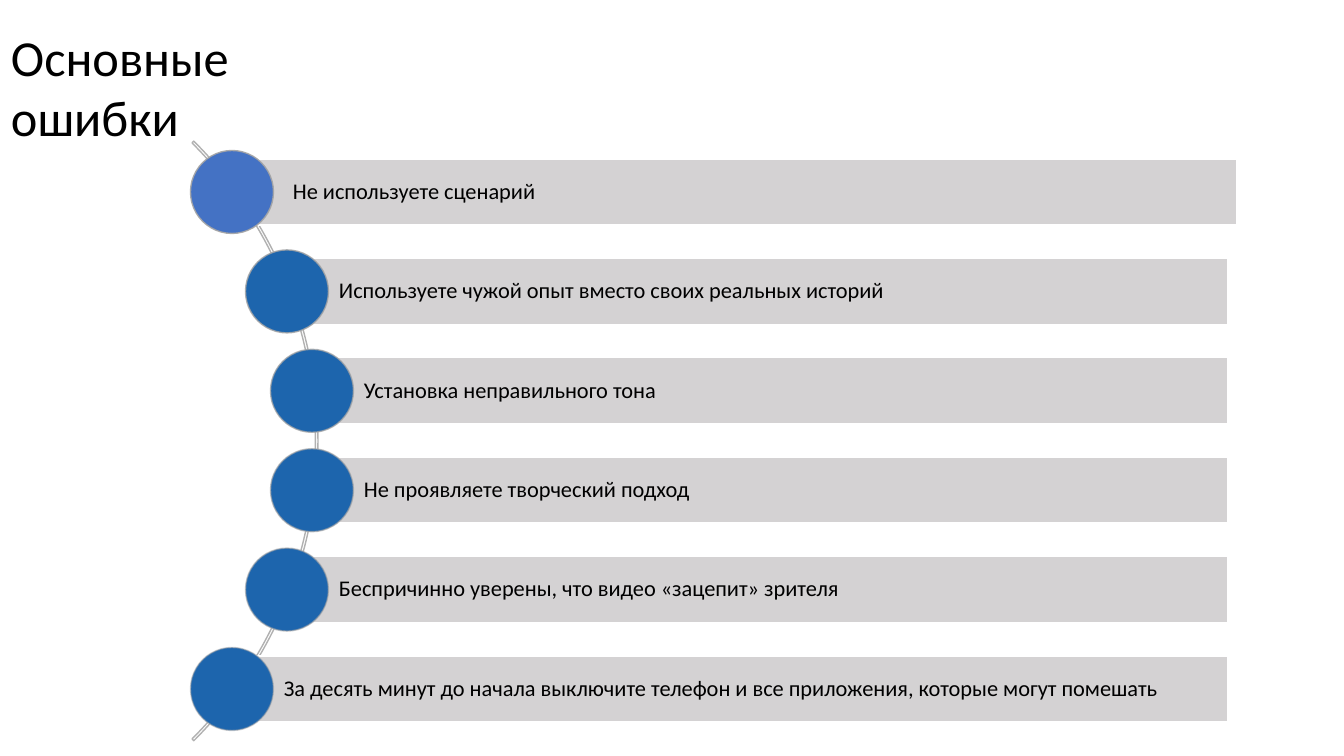
from pptx import Presentation
from pptx.dml.color import RGBColor
from pptx.enum.shapes import MSO_SHAPE
from pptx.enum.text import MSO_ANCHOR, MSO_AUTO_SIZE, PP_ALIGN
from pptx.oxml.ns import qn
from pptx.util import Pt
from lxml import etree

ARC, BAR, DOT = MSO_SHAPE.BLOCK_ARC, MSO_SHAPE.RECTANGLE, MSO_SHAPE.OVAL
TOP, MIDDLE, LEFT = MSO_ANCHOR.TOP, MSO_ANCHOR.MIDDLE, PP_ALIGN.LEFT

# Content: text, centre x of the dot, shift of the bar
TITLE = "Основные ошибки"
MISTAKES = [
    ("Не используете сценарий", 232, 9),
    ("Используете чужой опыт вместо своих реальных историй", 287, 0),
    ("Установка неправильного тона", 312, 0),
    ("Не проявляете творческий подход", 312, 0),
    ("Беспричинно уверены, что видео «зацепит» зрителя", 287, 0),
    ("За десять минут до начала выключите телефон и все приложения, "
     "которые могут помешать", 232, 0),
]
COLORS = {"text": "000000", "bar": "D4D2D3", "edge": "FFFFFF", "arc": "B1B1B1",
          "first": "4472C4", "dot": "1D65AD", "ring": "A5A5A5"}

# Layout in px
W, H = 1344, 756
FIRST_Y, PITCH = 192, 99.4
BAR_H, BAR_RIGHT, DOT_D = 66, 1228, 83
ARC_X, ARC_Y, ARC_D = -530, 17, 848


def px(n):
    return round(n * 914400 / 100.8)


def color(name):
    return RGBColor.from_string(COLORS[name])


def add_shape(kind, x, y, w, h, fill, line):
    sp = s.shapes.add_shape(kind, px(x), px(y), px(w), px(h))
    sp.shadow.inherit = False
    if fill:
        sp.fill.solid()
        sp.fill.fore_color.rgb = color(fill)
    else:
        sp.fill.background()
    sp.line.color.rgb = color(line)
    sp.line.width = Pt(1)
    return sp


def set_text(sp, text, size, anchor, insets, spacing):
    tf = sp.text_frame
    tf.word_wrap = True
    tf.auto_size = MSO_AUTO_SIZE.NONE
    tf.vertical_anchor = anchor
    tf.margin_left, tf.margin_top, tf.margin_right, tf.margin_bottom = map(px, insets)
    p = tf.paragraphs[0]
    p.alignment = LEFT
    p.line_spacing = spacing
    r = p.add_run()
    r.text = text
    r.font.name = "Calibri"
    r.font.size = Pt(size)
    r.font.color.rgb = color("text")


prs = Presentation()
prs.slide_width, prs.slide_height = px(W), px(H)
s = prs.slides.add_slide(prs.slide_layouts[5])

# Title
title = s.shapes.title
title.left, title.top, title.width, title.height = px(1), px(21), px(400), px(132)
set_text(title, TITLE, 36, TOP, (10, 5, 10, 5), 1.0)

# Arc behind the list, from 315 to 45 degrees
arc = add_shape(ARC, ARC_X, ARC_Y, ARC_D, ARC_D, None, "arc")
for i, value in enumerate((189, 27, 0.003)):
    arc.adjustments[i] = value

# Bars with dots
for i, (text, x, shift) in enumerate(MISTAKES):
    y = FIRST_Y + i * PITCH
    bar = add_shape(BAR, x + shift, y - BAR_H / 2, BAR_RIGHT - x, BAR_H, "bar", "edge")
    set_text(bar, text, 16, MIDDLE, (52, 4, 4, 4), 0.9)
    dot = add_shape(DOT, x - DOT_D / 2, y - DOT_D / 2, DOT_D, DOT_D,
                    "dot" if i else "first", "ring")
    # Ring opacity falls from 90 to 50 percent
    ring = dot.line.fill.fore_color and dot.element.spPr.find(qn("a:ln"))
    alpha = etree.SubElement(ring.find(".//" + qn("a:srgbClr")), qn("a:alpha"))
    alpha.set("val", str((90 - 8 * i) * 1000))

prs.save("out.pptx")
